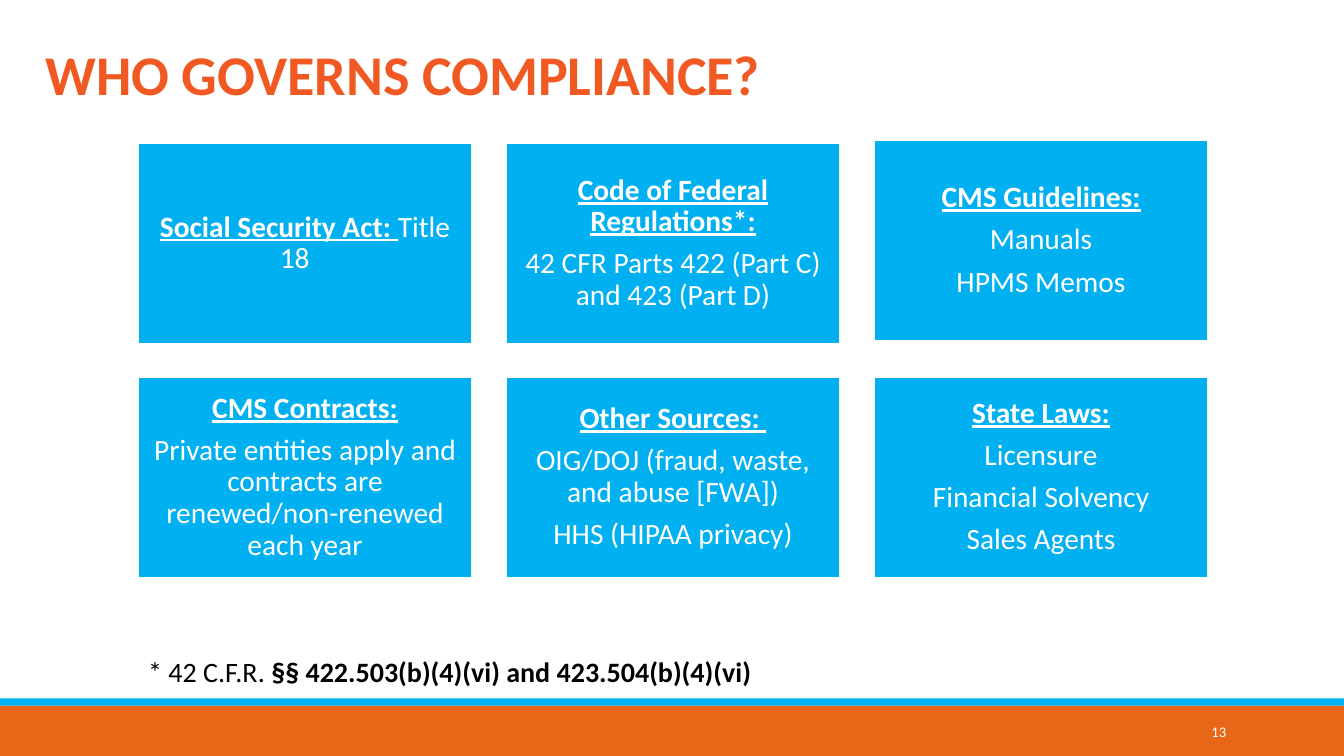
from dataclasses import dataclass

from pptx import Presentation
from pptx.dml.color import RGBColor
from pptx.enum.shapes import MSO_SHAPE
from pptx.enum.text import MSO_ANCHOR, MSO_AUTO_SIZE, PP_ALIGN
from pptx.util import Inches, Pt

RECTANGLE = MSO_SHAPE.RECTANGLE
TOP, MIDDLE = MSO_ANCHOR.TOP, MSO_ANCHOR.MIDDLE
LEFT, CENTER, RIGHT = PP_ALIGN.LEFT, PP_ALIGN.CENTER, PP_ALIGN.RIGHT
NO_AUTO_SIZE = MSO_AUTO_SIZE.NONE

FONT = "Calibri"
BLUE, ORANGE, TITLE_ORANGE = "00B0F0", "E76618", "F15922"
WHITE, BLACK = "FFFFFF", "000000"
TITLE_LAYOUT = 5

COLUMNS = 3
CARD_LEFT, CARD_TOP = 1.37, 1.42
CARD_WIDTH, CARD_HEIGHT = 3.31, 1.99
COLUMN_STEP, ROW_STEP = 3.65, 2.32
CARD_INSET = 0.09


@dataclass
class Card:
    heading: str
    lines: list[str]
    inline: str = ""
    raised: float = 0


@dataclass
class Band:
    top: float
    height: float
    color: str


CARDS = [
    Card("Social Security Act: ", [], inline="Title 18\t"),
    Card("Code of Federal Regulations*:", ["42 CFR Parts 422 (Part C) and 423 (Part D)"]),
    Card("CMS Guidelines:", ["Manuals", "HPMS Memos"], raised=0.03),
    Card("CMS Contracts:", ["Private entities apply and contracts are renewed/non-renewed each year"]),
    Card("Other Sources: ", ["OIG/DOJ (fraud, waste, and abuse [FWA])", "HHS (HIPAA privacy)"]),
    Card("State Laws:", ["Licensure", "Financial Solvency", "Sales Agents"]),
]
BANDS = [Band(7, 0.5, ORANGE), Band(6.93, 0.07, BLUE)]


def rgb(color: str) -> RGBColor:
    return RGBColor.from_string(color)


def format_paragraph(paragraph, size: float, color: str, alignment) -> None:
    paragraph.alignment = alignment
    paragraph.font.name = FONT
    paragraph.font.size = Pt(size)
    paragraph.font.color.rgb = rgb(color)


def add_run(paragraph, text: str, bold: bool = False, underline: bool = False) -> None:
    run = paragraph.add_run()
    run.text = text
    run.font.bold = bold
    run.font.underline = underline


def add_rectangle(slide, left: float, top: float, width: float, height: float, color: str):
    shape = slide.shapes.add_shape(
        RECTANGLE, Inches(left), Inches(top), Inches(width), Inches(height))
    shape.shadow.inherit = False
    shape.fill.solid()
    shape.fill.fore_color.rgb = rgb(color)
    shape.line.fill.background()
    return shape


def add_text_box(slide, left: float, top: float, width: float, height: float, anchor):
    box = slide.shapes.add_textbox(Inches(left), Inches(top), Inches(width), Inches(height))
    box.text_frame.word_wrap = True
    box.text_frame.vertical_anchor = anchor
    return box.text_frame.paragraphs[0]


def add_title(slide, text: str) -> None:
    title = slide.shapes.title
    title.left, title.top = Inches(0.35), Inches(0.34)
    title.width, title.height = Inches(7.36), Inches(0.77)
    frame = title.text_frame
    frame.text = text
    frame.word_wrap = False
    frame.auto_size = NO_AUTO_SIZE
    frame.vertical_anchor = TOP
    paragraph = frame.paragraphs[0]
    format_paragraph(paragraph, 40, TITLE_ORANGE, LEFT)
    paragraph.font.bold = True


def add_card(slide, card: Card, index: int) -> None:
    row, column = divmod(index, COLUMNS)
    shape = add_rectangle(
        slide, CARD_LEFT + column * COLUMN_STEP,
        CARD_TOP + row * ROW_STEP - card.raised, CARD_WIDTH, CARD_HEIGHT, BLUE)
    shape.line.color.rgb = rgb(WHITE)
    shape.line.width = Pt(1.25)
    frame = shape.text_frame
    frame.word_wrap = True
    frame.vertical_anchor = MIDDLE
    frame.margin_left = frame.margin_right = Inches(CARD_INSET)
    frame.margin_top = frame.margin_bottom = Inches(CARD_INSET)
    heading = frame.paragraphs[0]
    add_run(heading, card.heading, bold=True, underline=True)
    if card.inline:
        add_run(heading, card.inline)
    for line in card.lines:
        add_run(frame.add_paragraph(), line)
    for paragraph in frame.paragraphs:
        format_paragraph(paragraph, 21, WHITE, CENTER)
        paragraph.line_spacing = 0.9
        paragraph.space_after = Pt(7.35)


def main() -> None:
    presentation = Presentation()
    presentation.slide_width, presentation.slide_height = Inches(13.33), Inches(7.5)
    slide = presentation.slides.add_slide(presentation.slide_layouts[TITLE_LAYOUT])
    for band in BANDS:
        add_rectangle(slide, 0, band.top, 13.33, band.height, band.color)
    add_title(slide, "WHO GOVERNS COMPLIANCE?")
    for index, card in enumerate(CARDS):
        add_card(slide, card, index)

    footnote = add_text_box(slide, 1.37, 6.44, 7.79, 0.44, TOP)
    add_run(footnote, "* 42 C.F.R. ")
    add_run(footnote, "§§ 422.503(b)(4)(vi) and 423.504(b)(4)(vi)", bold=True)
    format_paragraph(footnote, 20, BLACK, LEFT)

    page_number = add_text_box(slide, 10.83, 7.06, 1.43, 0.4, MIDDLE)
    add_run(page_number, "13")
    format_paragraph(page_number, 10.5, WHITE, RIGHT)
    presentation.save("out.pptx")


if __name__ == "__main__":
    main()
